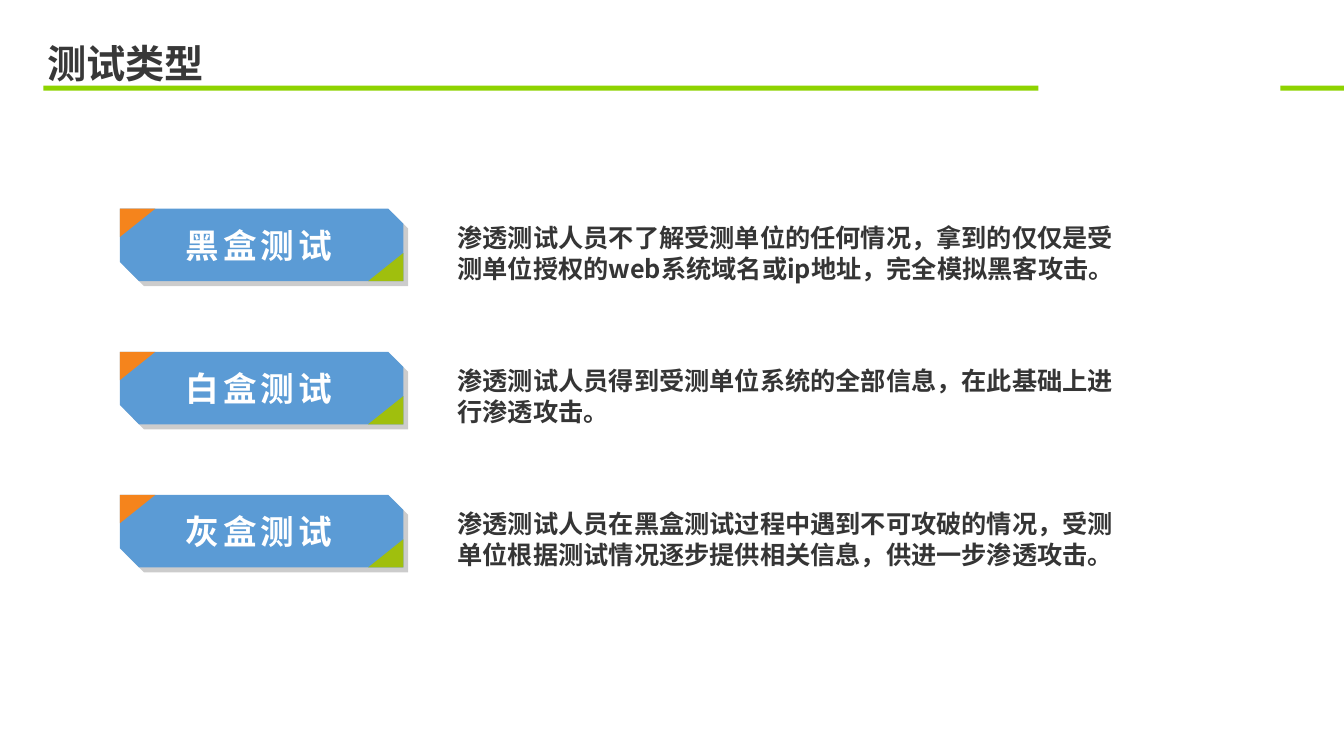
import pptx
import pptx.dml.color
import pptx.enum.shapes
import pptx.enum.text
import pptx.oxml.ns
import pptx.util
from lxml import etree

Inches = pptx.util.Inches
RGBColor = pptx.dml.color.RGBColor
ALIGN = pptx.enum.text.PP_ALIGN
SHAPE = pptx.enum.shapes.MSO_SHAPE
qn = pptx.oxml.ns.qn

FONT = "Noto Sans CJK SC"
LINE_HEIGHT = 1.21
RULE_GREEN = RGBColor(0x8E, 0xD3, 0x00)
BLUE = RGBColor(0x5B, 0x9B, 0xD5)
ORANGE = RGBColor(0xF5, 0x84, 0x1C)
OLIVE = RGBColor(0xA0, 0xBF, 0x0D)
WHITE = RGBColor(0xFF, 0xFF, 0xFF)
TITLE_GREY = RGBColor(0x38, 0x38, 0x38)
TEXT_GREY = RGBColor(0x35, 0x35, 0x35)

TEST_TYPES = [
    ("黑盒测试", "渗透测试人员不了解受测单位的任何情况，拿到的仅仅是受测单位授权的web系统域名或ip地址，完全模拟黑客攻击。"),
    ("白盒测试", "渗透测试人员得到受测单位系统的全部信息，在此基础上进行渗透攻击。"),
    ("灰盒测试", "渗透测试人员在黑盒测试过程中遇到不可攻破的情况，受测单位根据测试情况逐步提供相关信息，供进一步渗透攻击。"),
]


def write_text(box, text, size, color, align=ALIGN.LEFT, wrap=True, spacing=0):
    frame = box.text_frame
    frame.word_wrap = wrap
    frame.auto_size = pptx.enum.text.MSO_AUTO_SIZE.SHAPE_TO_FIT_TEXT
    frame.vertical_anchor = pptx.enum.text.MSO_ANCHOR.TOP
    para = frame.paragraphs[0]
    para.alignment = align
    para.line_spacing = pptx.util.Pt(round(size * LINE_HEIGHT))
    run = para.add_run()
    run.text = text
    run.font.name = FONT
    run.font.size = pptx.util.Pt(size)
    run.font.bold = True
    run.font.color.rgb = color
    properties = run.font._element
    etree.SubElement(properties, qn("a:ea"), typeface=FONT)
    if spacing:
        properties.set("spc", str(spacing * 100))


def paint(shape, color):
    shape.shadow.inherit = False
    shape.fill.solid()
    shape.fill.fore_color.rgb = color
    shape.line.fill.background()


def add_header(page, title):
    box = page.shapes.title
    box.left, box.top = Inches(0.37), Inches(0.33)
    box.width, box.height = Inches(1.77), Inches(0.57)
    write_text(box, title, 28, TITLE_GREY, wrap=False)
    # Green rules under the title
    for left, width in ((0.43, 9.87), (12.7, 0.63)):
        rule = page.shapes.add_shape(
            SHAPE.RECTANGLE, Inches(left), Inches(0.85), Inches(width), Inches(0.05))
        paint(rule, RULE_GREEN)


def add_corner(page, left, top, width, height, rotation, color):
    # The triangle is turned a quarter, so its own sides are swapped
    corner = page.shapes.add_shape(
        SHAPE.ISOSCELES_TRIANGLE,
        Inches(left + (width - height) / 2), Inches(top - (width - height) / 2),
        Inches(height), Inches(width))
    corner.adjustments[0] = 0
    corner.rotation = rotation
    paint(corner, color)


def add_badge(page, left, top, width, height, label):
    right, bottom = left + width, top + height
    # Plate with two cut corners
    outline = [(left, top), (right - 0.15, top), (right, top + 0.15),
               (right, bottom), (left + 0.19, bottom), (left, bottom - 0.19)]
    points = [(Inches(x), Inches(y)) for x, y in outline]
    builder = page.shapes.build_freeform(*points[0])
    builder.add_line_segments(points[1:], close=True)
    plate = builder.convert_to_shape()
    paint(plate, BLUE)
    # Hard offset shadow
    effects = plate._element.spPr.find(qn("a:effectLst"))
    shadow = etree.SubElement(
        effects, qn("a:outerShdw"), blurRad="0", dist=str(pptx.util.Pt(5)),
        dir=str(45 * 60000), algn="tl", rotWithShape="0")
    shade = etree.SubElement(shadow, qn("a:srgbClr"), val="000000")
    etree.SubElement(shade, qn("a:alpha"), val="20000")
    # Label
    box = page.shapes.add_textbox(
        Inches(left + 0.55), Inches(top + 0.11), Inches(1.93), Inches(0.5))
    write_text(box, label, 24, WHITE, ALIGN.JUSTIFY, spacing=3)
    # Coloured corners
    wide, high = 0.35, 0.28
    add_corner(page, left, top, wide, high, 90, ORANGE)
    add_corner(page, right - wide, bottom - high, wide, high, 270, OLIVE)


def add_test_type(page, left, top, label, description):
    add_badge(page, left, top, 2.81, 0.72, label)
    box = page.shapes.add_textbox(
        Inches(left + 3.25), Inches(top + 0.08), Inches(6.74), Inches(0.71))
    write_text(box, description, 18, TEXT_GREY)


def main():
    deck = pptx.Presentation()
    deck.slide_width, deck.slide_height = Inches(13.33), Inches(7.5)
    page = deck.slides.add_slide(deck.slide_layouts[5])
    add_header(page, "测试类型")
    for row, (label, description) in enumerate(TEST_TYPES):
        add_test_type(page, 1.19, 2.07 + row * 1.42, label, description)
    deck.save("out.pptx")


if __name__ == "__main__":
    main()
